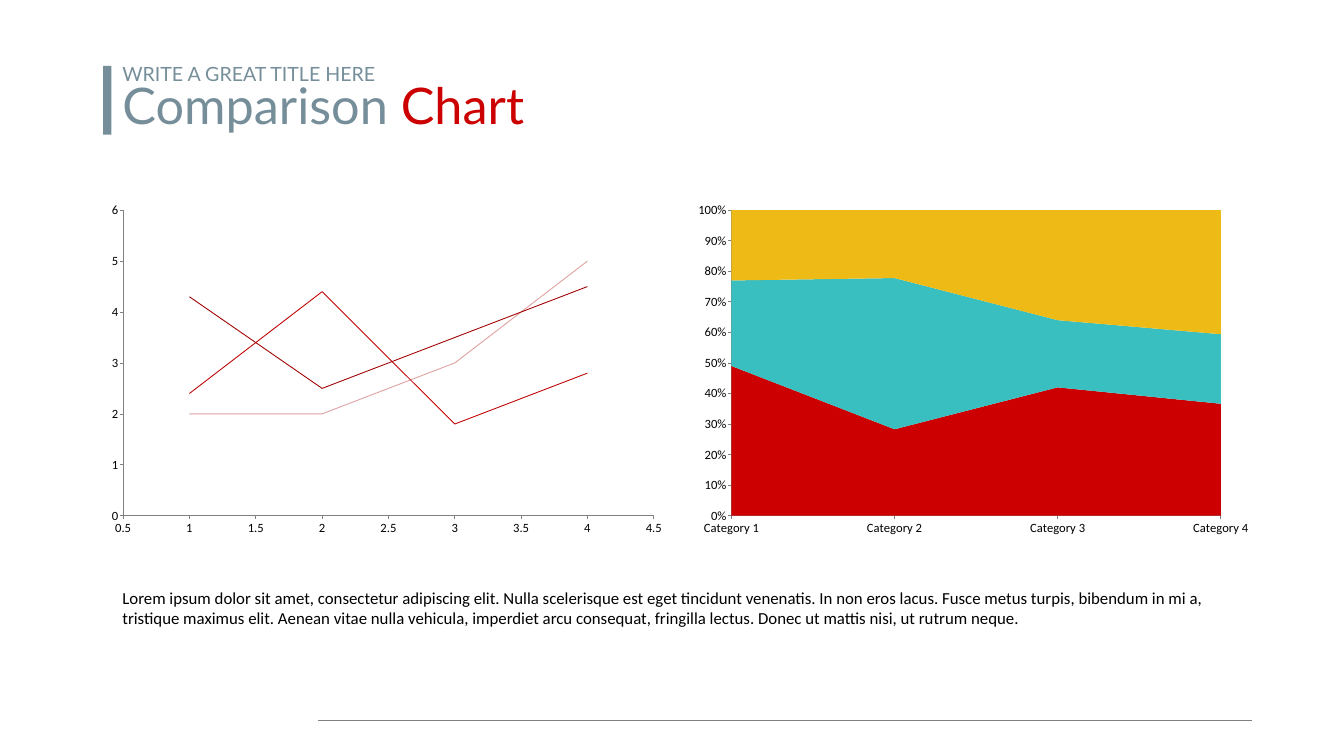
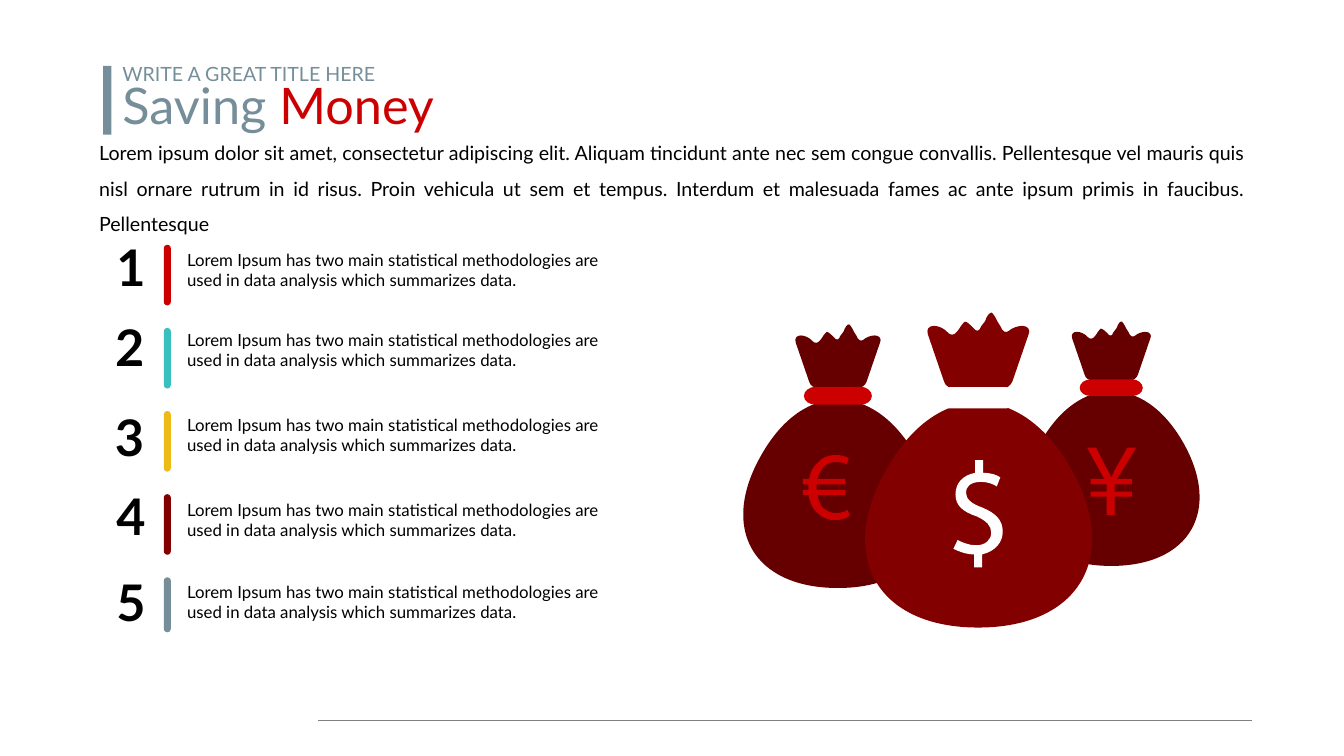
import pptx
import pptx.chart.data
import pptx.dml.color
import pptx.enum.chart
import pptx.enum.shapes
import pptx.enum.text
import pptx.oxml.ns
import pptx.util
import lxml.etree

Pt = pptx.util.Pt
qn = pptx.oxml.ns.qn
ALIGN = pptx.enum.text.PP_ALIGN
ANCHOR = pptx.enum.text.MSO_ANCHOR
XL = pptx.enum.chart.XL_CHART_TYPE
SHAPE = pptx.enum.shapes.MSO_SHAPE

SLATE, RED, TEAL, GOLD = "758E99", "CC0000", "3ABFC0", "EEBB16"
MAROON, DARK, GREY, BLACK, WHITE = "820000", "660000", "808080", "000000", "FFFFFF"


def paint(fill, colour):
    fill.solid()
    fill.fore_color.rgb = pptx.dml.color.RGBColor.from_string(colour)


def add_text(shape, *runs, size=24, font="Lato", colour=BLACK, bold=False, align=ALIGN.LEFT,
             spacing=None, anchor=ANCHOR.TOP, inset=(7.2, 3.6)):
    """Each run is a string, or a (string, colour) pair."""
    tf = shape.text_frame
    tf.word_wrap = True
    tf.auto_size = pptx.enum.text.MSO_AUTO_SIZE.SHAPE_TO_FIT_TEXT
    tf.vertical_anchor = anchor
    tf.margin_left = tf.margin_right = Pt(inset[0])
    tf.margin_top = tf.margin_bottom = Pt(inset[1])
    p = tf.paragraphs[0]
    p.alignment = align
    if spacing:
        p.line_spacing = spacing
    for run in runs:
        words, run_colour = (run, colour) if isinstance(run, str) else run
        r = p.add_run()
        r.text = words
        r.font.size, r.font.name, r.font.bold = Pt(size), font, bold
        paint(r.font.fill, run_colour)


prs = pptx.Presentation()
prs.slide_width, prs.slide_height = Pt(1920), Pt(1080)
layout = prs.slide_layouts[5]
for ph in list(layout.placeholders):
    if ph.placeholder_format.idx:
        ph.element.getparent().remove(ph.element)

# Shared heading
slides = []
for first, second in (("Comparison ", "Chart"), ("Saving ", "Money")):
    s = prs.slides.add_slide(layout)
    slides.append(s)
    title = s.shapes.title
    title.left, title.top, title.width, title.height = Pt(167.75), Pt(119), Pt(1104.5), Pt(80)
    add_text(title, first, (second, RED), size=72, colour=SLATE, spacing=0.8)
    add_text(s.shapes.add_textbox(Pt(167.75), Pt(85), Pt(690), Pt(41)),
             "WRITE A GREAT TITLE HERE", size=28, colour=SLATE)
    bar = s.shapes.add_shape(SHAPE.RECTANGLE, Pt(147.5), Pt(94), Pt(11.5), Pt(98.5))
    bar.shadow.inherit = False
    paint(bar.fill, SLATE)
    bar.line.fill.background()

# Footer rule, kept on the layout
rule = slides[0].shapes.add_connector(pptx.enum.shapes.MSO_CONNECTOR.STRAIGHT,
                                      Pt(455), Pt(1029.6), Pt(1788), Pt(1029.6))
paint(rule.line.fill, GREY)
rule.line.width = Pt(1)
lxml.etree.SubElement(rule.element.spPr, qn("a:effectLst"))
layout.shapes.element.append(rule.element)

# Slide 1: line and area charts
s = slides[0]
xy = pptx.chart.data.XyChartData()
for n, values in enumerate(((4.3, 2.5, 3.5, 4.5), (2.4, 4.4, 1.8, 2.8), (2, 2, 3, 5)), 1):
    series = xy.add_series(f"Series {n}")
    for x, y in enumerate(values, 1):
        series.add_data_point(x, y)
shares = pptx.chart.data.CategoryChartData()
shares.categories = [f"Category {n}" for n in range(1, 5)]
for n, values in enumerate(((49, 28, 42, 37), (28, 49, 22, 23), (23, 22, 36, 41)), 1):
    shares.add_series(f"Series {n}", values)

charts = []
for kind, left, data in ((XL.XY_SCATTER_LINES_NO_MARKERS, 143.25, xy),
                         (XL.AREA_STACKED_100, 981.25, shares)):
    chart = s.shapes.add_chart(kind, Pt(left), Pt(279.5), Pt(818.5), Pt(496), data).chart
    charts.append(chart)
    chart.has_title = chart.has_legend = False
    chart.plots[0].vary_by_categories = False
    chart.font.size, chart.font.name = Pt(18), "Calibri"
    paint(chart.font.fill, BLACK)
    for axis in (chart.category_axis, chart.value_axis):
        axis.has_major_gridlines = False
        axis.major_tick_mark = pptx.enum.chart.XL_TICK_MARK.OUTSIDE
        axis.minor_tick_mark = pptx.enum.chart.XL_TICK_MARK.NONE
        paint(axis.format.line.fill, GREY)
        axis.format.line.width = Pt(1)
lines, areas = charts
for series, colour in zip(lines.plots[0].series, ("A00000", "BE0000", "DFA0A0")):
    series.smooth = False
    series.marker.style = pptx.enum.chart.XL_MARKER_STYLE.NONE
    paint(series.format.line.fill, colour)
    series.format.line.width = Pt(1.25)
for series, colour in zip(areas.plots[0].series, (RED, TEAL, GOLD)):
    paint(series.format.fill, colour)
for axis, low, high, step in ((lines.category_axis, 0.5, 4.5, 0.5), (lines.value_axis, 0, 6, 1),
                              (areas.value_axis, 0, 1, 0.1)):
    axis.minimum_scale, axis.maximum_scale, axis.major_unit = low, high, step
areas.value_axis.tick_labels.number_format = "0%"
areas.value_axis.tick_labels.number_format_is_linked = False

add_text(s.shapes.add_textbox(Pt(167.75), Pt(836), Pt(1588), Pt(65.5)),
         "Lorem ipsum dolor sit amet, consectetur adipiscing elit. Nulla scelerisque est eget "
         "tincidunt venenatis. In non eros lacus. Fusce metus turpis, bibendum in mi a, tristique "
         "maximus elit. Aenean vitae nulla vehicula, imperdiet arcu consequat, fringilla lectus. "
         "Donec ut mattis nisi, ut rutrum neque.", font="Calibri")

# Slide 2: introduction
s = slides[1]
add_text(s.shapes.add_textbox(Pt(122.5), Pt(178), Pt(1674), Pt(165.5)),
         "Lorem ipsum dolor sit amet, consectetur adipiscing elit. Aliquam tincidunt ante nec sem "
         "congue convallis. Pellentesque vel mauris quis nisl ornare rutrum in id risus. Proin "
         "vehicula ut sem et tempus. Interdum et malesuada fames ac ante ipsum primis in "
         "faucibus. Pellentesque",
         size=28, align=ALIGN.JUSTIFY, spacing=1.5, anchor=ANCHOR.MIDDLE, inset=(19.2, 9.6))

# Money bag outlines: a pair is a straight step, six numbers a curve (two controls, end).
# Bag parts are measured from the middle of the bag's base.
body = [(0, 0), (-145, 0, -203, -102, -130, -228), (-59, -353, 60, -353, 132, -228),
        (204, -102, 145, 0, 0, 0)]
crown = [(63, -431), (57, -431, 48, -428, 44, -424), (40, -420, 34, -423, 32, -430), (27, -438),
         (24, -445, 20, -450, 19, -450), (16, -450, 12, -445, 10, -438), (4, -430),
         (2, -423, -3, -422, -7, -428), (-12, -433, -16, -437, -19, -437),
         (-19, -437, -24, -433, -27, -427), (-30, -423), (-34, -417, -40, -417, -44, -422),
         (-48, -427, -57, -431, -63, -431), (-71, -431, -74, -426, -72, -419), (-49, -352),
         (-48, -346, -40, -341, -34, -341), (34, -341), (40, -341, 47, -346, 49, -352),
         (72, -419), (75, -425, 71, -431, 63, -431)]
tie = [(58, -328), (58, -319, 49, -313, 39, -313), (-38, -313),
       (-49, -313, -58, -319, -58, -328), (-58, -336, -49, -343.5, -38, -343.5), (39, -343.5),
       (49, -343.5, 58, -336, 58, -328)]
# Currency signs are measured from their top left corner.
euro = [(67, 86.5), (62.5, 90, 55.5, 93, 46, 93), (34.5, 93, 26, 88.5, 18, 80),
        (13, 75, 9.5, 66, 8, 57), (0, 57), (0, 50), (8, 50), (8, 42), (0, 42), (0, 34), (9, 34),
        (10, 25, 14.5, 17, 21, 11.5), (27, 3.5, 36, 0, 47.5, 0), (55.5, 0, 62, 2, 65.5, 5),
        (62.5, 13.5), (60.5, 11.5, 54, 10, 47.5, 10), (39.5, 10, 34.5, 12, 29.5, 17),
        (26, 21.5, 22, 28, 21, 34), (60.5, 34), (60.5, 42), (19.5, 42), (19.5, 50), (60.5, 50),
        (60.5, 57), (21, 57), (22, 65, 24.5, 71, 28, 75), (34, 80, 39.5, 83, 47.5, 83),
        (55.5, 83, 62, 80, 64, 78.5)]
yen = [(28, 96), (28, 70), (5, 70), (5, 63), (28, 63), (28, 52.5), (5, 52.5), (5, 44.5),
       (24.5, 44.5), (0, 0), (13, 0), (28, 30), (31, 34.5, 33, 39.5, 34.5, 43),
       (36.5, 39.5, 38, 34.5, 41, 29.5), (57.5, 0), (70, 0), (43, 44.5), (64, 44.5), (64, 52.5),
       (39.5, 52.5), (39.5, 63), (64, 63), (64, 70), (39.5, 70), (39.5, 96)]
dollar = [(29.5, 153), (29.5, 134.5), (18, 134.5, 7, 130, 0, 126.5), (6, 114),
          (11.5, 117, 22, 121.5, 32.5, 121.5), (45.5, 121.5, 54, 114, 54, 103.5),
          (54, 93.5, 47.5, 87, 34, 80.5), (14.5, 74, 3, 65.5, 3, 49),
          (3, 33, 13, 21.5, 31, 18), (31, 0), (42.5, 0), (42.5, 18),
          (54, 18, 62, 21, 67, 24.5), (62, 37.5), (57.5, 34.5, 50.5, 31, 39, 31),
          (23, 31, 18, 39, 18, 46), (18, 56, 26, 62, 41, 67.5),
          (60.5, 75.5, 70.5, 85.5, 70.5, 102), (70.5, 116.5, 60.5, 130, 41, 134.5), (41, 153)]

# Base x, base y, scale in percent, bag colour, trim colour, sign and its corner
bags = [(1197, 840, 83.7, DARK, RED, euro, 1147, 650),
        (1587.5, 808.5, 77.6, DARK, RED, yen, 1553, 639.5),
        (1397.5, 896.5, 100, MAROON, WHITE, dollar, 1362, 657.5)]
group = s.shapes.add_group_shape()
for x, y, percent, bag_colour, trim, sign, sign_x, sign_y in bags:
    for outline, ox, oy, k, colour in ((body, x, y, percent, bag_colour),
                                       (crown, x, y, percent, bag_colour),
                                       (tie, x, y, percent, trim),
                                       (sign, sign_x, sign_y, 100, trim)):
        # Nodes in hundredths of a point
        nodes = [(100 * ox + k * step[i], 100 * oy + k * step[i + 1])
                 for step in outline for i in range(0, len(step), 2)]
        builder = group.shapes.build_freeform(*nodes[0], scale=Pt(0.01))
        builder.add_line_segments(nodes[1:], close=True)
        part = builder.convert_to_shape()
        # Join the three nodes of each curve into one segment
        segments = iter(list(part.element.iter(qn("a:lnTo"))))
        for step in outline[1:]:
            segment = next(segments)
            if len(step) == 6:
                segment.tag = qn("a:cubicBezTo")
                for extra in (next(segments), next(segments)):
                    segment.append(extra[0])
                    extra.getparent().remove(extra)
        part.shadow.inherit = False
        paint(part.fill, colour)
        part.line.fill.background()

# Numbered list: text top, number left and top, bar height, colour
rows = [(348, 147.5, 330, 86.5, RED), (462, 146, 445, 86.5, TEAL), (584, 145.5, 573, 86.5, GOLD),
        (705, 147.5, 686, 86.5, MAROON), (822, 147.5, 808, 78.5, SLATE)]
for i, (text_top, number_left, number_top, bar_height, colour) in enumerate(rows):
    add_text(s.shapes.add_textbox(Pt(250), Pt(text_top), Pt(662.5), Pt(75.5)),
             "Lorem Ipsum has two main statistical methodologies are used in data analysis which "
             "summarizes data.", inset=(17.2, 8.6))
    bar = s.shapes.add_shape(SHAPE.ROUND_2_SAME_RECTANGLE, Pt(234), Pt(349.75 + 118.75 * i),
                             Pt(10), Pt(bar_height))
    bar.adjustments[0] = bar.adjustments[1] = 0.5
    bar.rotation = 180
    bar.shadow.inherit = False
    paint(bar.fill, colour)
    bar.line.fill.background()
    add_text(s.shapes.add_textbox(Pt(number_left), Pt(number_top), Pt(79), Pt(101.5)),
             str(i + 1), size=72, bold=True, align=ALIGN.CENTER, inset=(14.4, 7.2))

prs.save("out.pptx")
